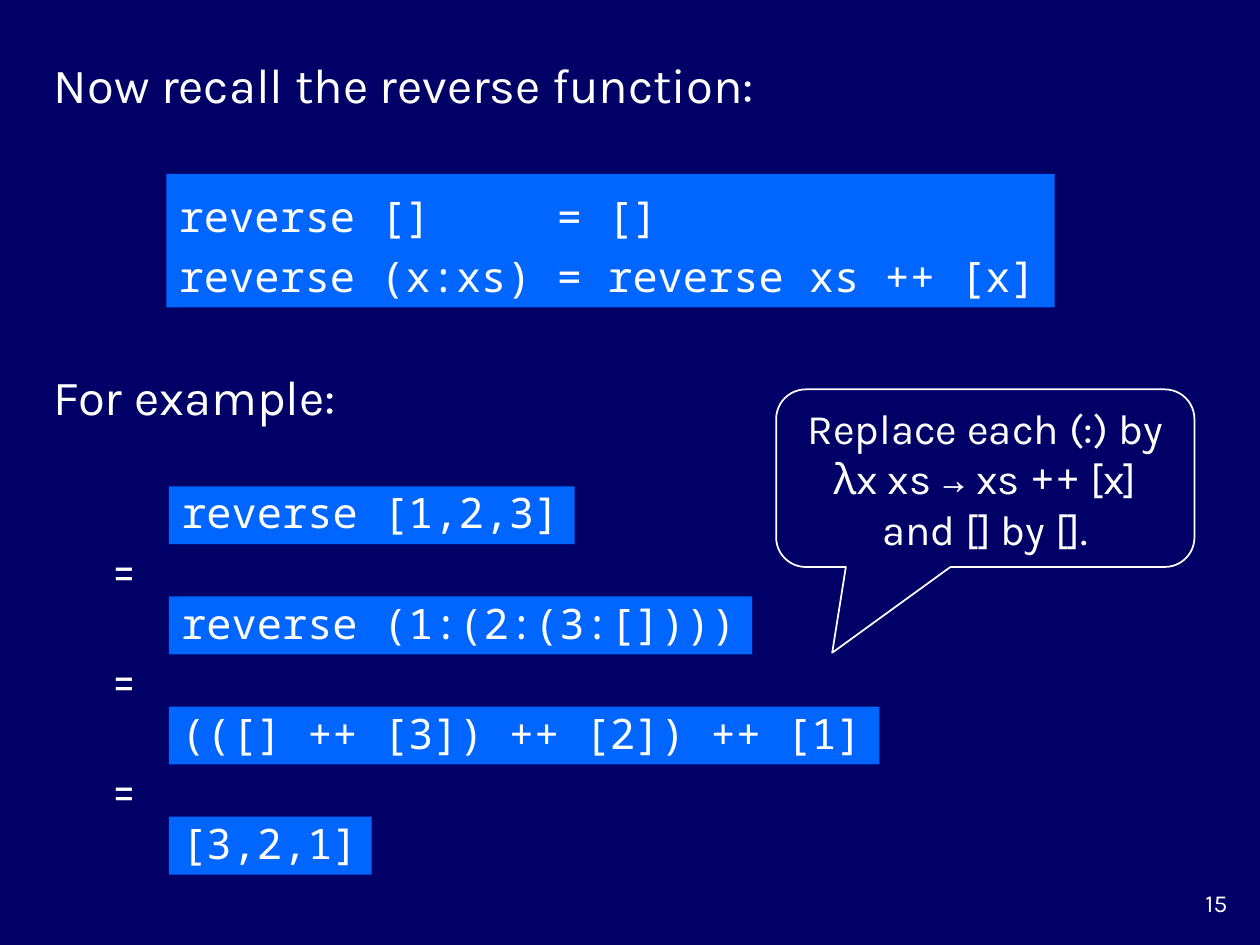
from pptx import Presentation
from pptx.dml.color import RGBColor
from pptx.enum.shapes import MSO_SHAPE
from pptx.enum.text import MSO_ANCHOR, MSO_AUTO_SIZE, PP_ALIGN
from pptx.util import Inches, Pt

RECT = MSO_SHAPE.RECTANGLE
CALLOUT = MSO_SHAPE.ROUNDED_RECTANGULAR_CALLOUT
MIDDLE, TOP = MSO_ANCHOR.MIDDLE, MSO_ANCHOR.TOP
FIT_SHAPE = MSO_AUTO_SIZE.SHAPE_TO_FIT_TEXT
LEFT, CENTER, RIGHT = PP_ALIGN.LEFT, PP_ALIGN.CENTER, PP_ALIGN.RIGHT

COLORS = {"background": "000066", "code": "0066FF", "text": "FFFFFF"}
BODY, MONO = "Karla", "Noto Sans Mono"


def color(name):
    return RGBColor.from_string(COLORS[name])


def style_font(font, name, size):
    font.name = name
    font.size = Pt(size)
    font.color.rgb = color("text")


def style_frame(tf, wrap, anchor=MIDDLE):
    tf.word_wrap = wrap
    tf.vertical_anchor = anchor
    tf.auto_size = FIT_SHAPE if anchor == MIDDLE else MSO_AUTO_SIZE.NONE


def add_label(s, box, text, size=28, align=LEFT, wrap=False, anchor=MIDDLE):
    tf = s.shapes.add_textbox(*map(Inches, box)).text_frame
    style_frame(tf, wrap, anchor)
    p = tf.paragraphs[0]
    p.text = text
    p.alignment = align
    style_font(p.font, BODY, size)


def add_code(s, box, lines, spacing):
    sp = s.shapes.add_shape(RECT, *map(Inches, box))
    sp.shadow.inherit = False
    sp.fill.solid()
    sp.fill.fore_color.rgb = color("code")
    sp.line.fill.background()
    tf = sp.text_frame
    style_frame(tf, wrap=False)
    for i, line in enumerate(lines):
        p = tf.paragraphs[0] if i == 0 else tf.add_paragraph()
        p.text = line
        p.alignment = LEFT
        p.line_spacing = spacing
        style_font(p.font, MONO, 24)


def add_derivation(s, left, top, steps):
    """Stack the code steps, with an equals sign between neighbours."""
    pitch = 0.874
    for i, (code, width) in enumerate(steps):
        y = top + i * pitch
        add_code(s, (left + 0.59, y, width, 0.46), [code], 0.9)
        if i:
            add_label(s, (left, y - 0.52, 0.48, 0.57), "=", align=CENTER)


def add_callout(s, box, runs):
    sp = s.shapes.add_shape(CALLOUT, *map(Inches, box))
    for i, value in enumerate((-0.366, 0.983, 0.167)):
        sp.adjustments[i] = value
    sp.shadow.inherit = False
    sp.fill.background()
    sp.line.color.rgb = color("text")
    sp.line.width = Pt(1)
    style_frame(sp.text_frame, wrap=True)
    p = sp.text_frame.paragraphs[0]
    p.alignment = CENTER
    for text, font in runs:
        r = p.add_run()
        r.text = text
        style_font(r.font, font, 24)


def main():
    prs = Presentation()
    prs.slide_width, prs.slide_height = Inches(10), Inches(7.5)
    s = prs.slides.add_slide(prs.slide_layouts[6])
    s.background.fill.solid()
    s.background.fill.fore_color.rgb = color("background")

    add_label(s, (9.17, 7, 0.67, 0.33), "15", 14, RIGHT, True, TOP)
    add_label(s, (0.33, 0.38, 8.97, 0.57),
              "Now recall the reverse function:", wrap=True)
    add_code(s, (1.32, 1.38, 7.05, 1.06),
             ["reverse []     = []", "reverse (x:xs) = reverse xs ++ [x]"],
             1.2)
    add_label(s, (0.33, 2.86, 2.45, 0.57), "For example:")
    add_derivation(s, 0.75, 3.86, [
        ("reverse [1,2,3]", 3.22),
        ("reverse (1:(2:(3:[])))", 4.63),
        ("(([] ++ [3]) ++ [2]) ++ [1]", 5.64),
        ("[3,2,1]", 1.61),
    ])
    add_callout(s, (6.16, 3.09, 3.32, 1.41), [
        ("Replace each (:) by λx xs ", BODY),
        ("→", MONO),
        (" xs ", BODY),
        ("++", MONO),
        (" [x] and [] by [].", BODY),
    ])
    prs.save("out.pptx")


if __name__ == "__main__":
    main()
